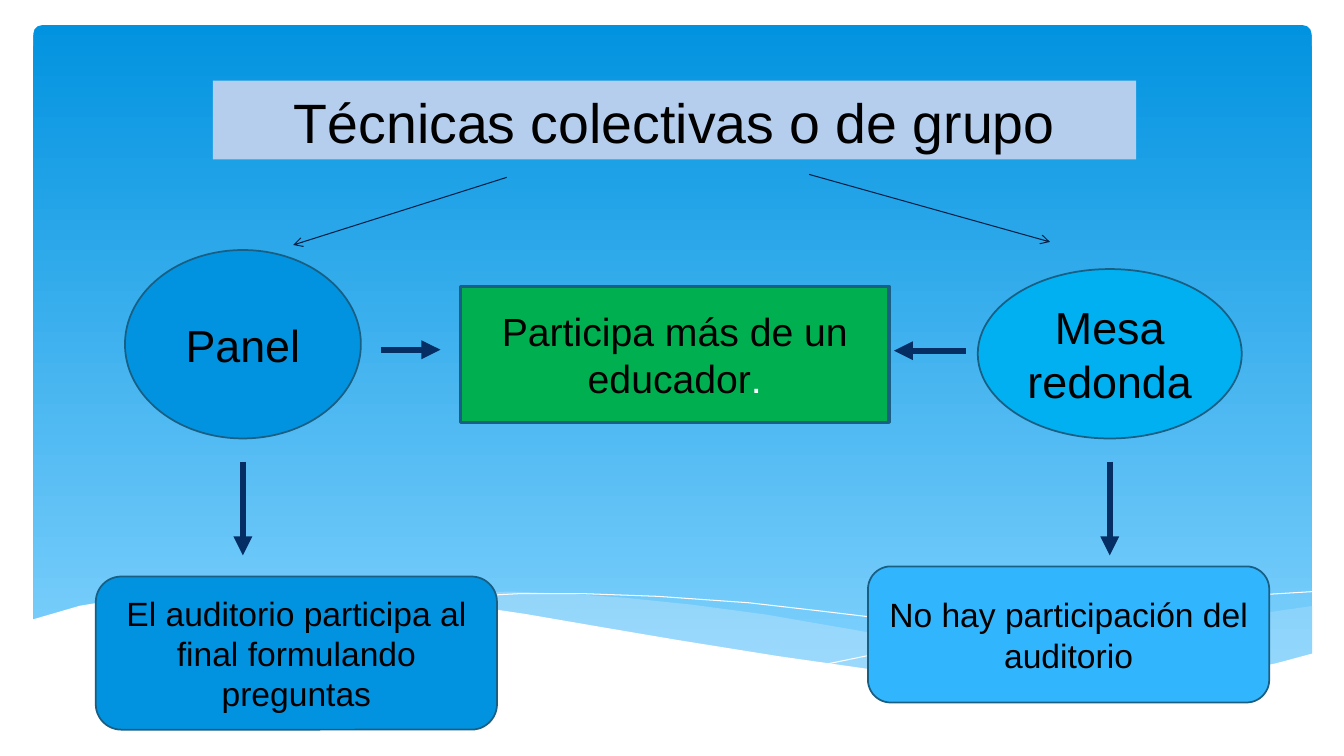
from lxml import etree
from pptx import Presentation
from pptx.dml.color import RGBColor
from pptx.enum.shapes import MSO_CONNECTOR, MSO_SHAPE
from pptx.enum.text import MSO_ANCHOR, MSO_AUTO_SIZE, PP_ALIGN
from pptx.oxml.ns import qn
from pptx.util import Pt

RECTANGLE = MSO_SHAPE.RECTANGLE
ROUNDED = MSO_SHAPE.ROUNDED_RECTANGLE
ELLIPSE = MSO_SHAPE.OVAL
STRAIGHT = MSO_CONNECTOR.STRAIGHT
CENTER = PP_ALIGN.CENTER
MIDDLE = MSO_ANCHOR.MIDDLE
BOTTOM = MSO_ANCHOR.BOTTOM
FIXED_SIZE = MSO_AUTO_SIZE.NONE

BLACK = RGBColor(0x00, 0x00, 0x00)
WHITE = RGBColor(0xFF, 0xFF, 0xFF)
BLUE = RGBColor(0x02, 0x93, 0xE0)
SKY = RGBColor(0x83, 0xD3, 0xFE)
MIST = RGBColor(0xC6, 0xE7, 0xFC)
TITLE_BLUE = RGBColor(0xB5, 0xCE, 0xED)
CYAN = RGBColor(0x00, 0xB0, 0xF0)
LIGHT_BLUE = RGBColor(0x31, 0xB6, 0xFD)
GREEN = RGBColor(0x00, 0xB0, 0x50)
OUTLINE = RGBColor(0x19, 0x5F, 0x84)
DARK_NAVY = RGBColor(0x04, 0x1F, 0x44)
NAVY = RGBColor(0x05, 0x2E, 0x65)

FONT = "Arial"

RIGHT_WAVE = [
    (938, 432.7), (898.6, 438.5), (827.3, 450), (748.8, 463.7), (678.2, 474.5),
    (635.8, 480.2), (677.5, 484.6), (727, 488), (782.6, 489.6), (829.4, 487.4),
    (870.5, 483), (905.8, 476), (938, 467.3),
]
MIDDLE_WAVE = [
    (858, 486), (805, 480), (745, 472.3), (678, 462), (605, 449), (547, 439),
    (494.6, 432), (446.4, 427), (404, 424), (365, 422.6), (330.5, 423.4),
    (275, 427), (310, 430.6), (348.5, 435), (389, 441.4), (432, 449.3),
    (509, 462), (578, 473), (639.4, 481), (694, 486.7), (743, 489),
    (786, 489.6), (824.4, 489),
]
FALLING_CURVE = [
    (297.4, 430), (330.5, 426.2), (372, 424), (415.4, 424), (470, 426),
    (535, 430.6), (584.6, 436.3), (639.4, 442.8), (699, 452), (764, 463),
    (872, 484.6),
]
RISING_CURVE = [
    (589.7, 474.5), (645.8, 463), (718.6, 450), (803.5, 436.3), (860.4, 429),
    (901.4, 424.8), (937.4, 422.6),
]
WHITE_WAVE = [
    (938.2, 466.6), (911.5, 473.8), (873.4, 481.7), (828.7, 486.7), (776, 489),
    (731, 487.4), (679.7, 483.8), (621.4, 478), (556, 468.7), (483, 457),
    (429, 447.8), (375, 438.5), (326, 431.3), (280.8, 426.2), (239.8, 423.4),
    (203, 422), (169, 422), (126.7, 423.4), (91.4, 427), (57, 432.7),
    (22.3, 442.8), (22.3, 526.3), (938.2, 526.3),
]


def write_text(shape, text, size, color=BLACK, anchor=MIDDLE, ending="", ending_color=WHITE):
    """Write one centred paragraph, with an optional ending in another colour."""
    frame = shape.text_frame
    frame.word_wrap = True
    frame.auto_size = FIXED_SIZE
    frame.vertical_anchor = anchor
    paragraph = frame.paragraphs[0]
    paragraph.alignment = CENTER
    for words, words_color in ((text, color), (ending, ending_color)):
        if words:
            run = paragraph.add_run()
            run.text = words
            run.font.name = FONT
            run.font.size = Pt(size)
            run.font.color.rgb = words_color


def add_card(slide):
    """Add the rounded gradient background."""
    card = slide.shapes.add_shape(ROUNDED, Pt(23.8), Pt(18), Pt(913), Pt(475.2))
    card.shadow.inherit = False
    card.adjustments[0] = 0.013
    card.line.fill.background()
    card.fill.gradient()
    card.fill.gradient_angle = 270
    for stop, color in zip(card.fill.gradient_stops, (BLUE, SKY)):
        stop.color.rgb = color


def add_outline(slide, points, closed):
    """Add a freeform through points and return it without a shadow."""
    corners = [(Pt(x), Pt(y)) for x, y in points]
    builder = slide.shapes.build_freeform(*corners[0])
    builder.add_line_segments(corners[1:], close=closed)
    shape = builder.convert_to_shape()
    shape.shadow.inherit = False
    return shape


def add_wave(slide, points, color, opacity=100):
    """Add a filled wave with the given opacity in percent."""
    wave = add_outline(slide, points, True)
    wave.line.fill.background()
    wave.fill.solid()
    wave.fill.fore_color.rgb = color
    if opacity < 100:
        color_element = wave.element.find(".//" + qn("a:srgbClr"))
        etree.SubElement(color_element, qn("a:alpha"), val=str(opacity * 1000))


def add_curve(slide, points):
    """Add a white hairline curve."""
    curve = add_outline(slide, points, False)
    curve.fill.background()
    curve.line.color.rgb = WHITE
    curve.line.width = Pt(0)


def add_title(slide, text):
    """Format the title placeholder and bring it in front of the scenery."""
    title = slide.shapes.title
    title.left, title.top, title.width, title.height = Pt(152), Pt(57.6), Pt(659.5), Pt(56.2)
    title.fill.solid()
    title.fill.fore_color.rgb = TITLE_BLUE
    write_text(title, text, 39.6, anchor=BOTTOM)
    title.element.getparent().append(title.element)


def add_node(slide, kind, box, color, text, size, line_width=1.25, ending=""):
    """Add an outlined shape with centred text."""
    node = slide.shapes.add_shape(kind, *(Pt(length) for length in box))
    node.shadow.inherit = False
    node.fill.solid()
    node.fill.fore_color.rgb = color
    node.line.color.rgb = OUTLINE
    node.line.width = Pt(line_width)
    write_text(node, text, size, ending=ending)


def add_arrow(slide, start, end, color=NAVY, width=4.5, head="triangle"):
    """Add a straight arrow from start to end."""
    arrow = slide.shapes.add_connector(STRAIGHT, *(Pt(length) for length in start + end))
    arrow.line.color.rgb = color
    arrow.line.width = Pt(width)
    line_element = arrow.element.find(".//" + qn("a:ln"))
    etree.SubElement(line_element, qn("a:tailEnd"), type=head)
    etree.SubElement(line_element.getparent(), qn("a:effectLst"))


def main():
    """Build and save the slide on group techniques."""
    presentation = Presentation()
    presentation.slide_width, presentation.slide_height = Pt(960), Pt(540)
    slide = presentation.slides.add_slide(presentation.slide_layouts[5])

    add_card(slide)
    add_wave(slide, RIGHT_WAVE, MIST, opacity=29)
    add_wave(slide, MIDDLE_WAVE, MIST, opacity=40)
    add_curve(slide, FALLING_CURVE)
    add_curve(slide, RISING_CURVE)
    add_wave(slide, WHITE_WAVE, WHITE)

    add_title(slide, "Técnicas colectivas o de grupo")
    add_node(slide, ELLIPSE, (89.3, 178.6, 168.5, 134.6), BLUE, "Panel", 32)
    add_node(slide, ELLIPSE, (698.4, 192.2, 188.6, 121), CYAN, "Mesa redonda", 32)
    add_node(slide, RECTANGLE, (329, 204.5, 306, 97.2), GREEN,
             "Participa más de un educador", 28, line_width=2.25, ending=".")
    add_node(slide, ROUNDED, (68.4, 411.8, 286.6, 109.4), BLUE,
             "El auditorio participa al final formulando preguntas", 24)
    add_node(slide, ROUNDED, (620, 404.6, 286.6, 97.2), LIGHT_BLUE,
             "No hay participación del auditorio", 24)

    for start, end in (((362, 126.7), (209.5, 175)), ((578, 124.6), (750, 172.8))):
        add_arrow(slide, start, end, color=DARK_NAVY, width=0.75, head="arrow")
    add_arrow(slide, (272, 249.8), (314.6, 249.8))
    add_arrow(slide, (689.8, 250.5), (638.6, 250.5))
    for center in (173.5, 792.7):
        add_arrow(slide, (center, 329.8), (center, 396.7))

    presentation.save("out.pptx")


if __name__ == "__main__":
    main()
